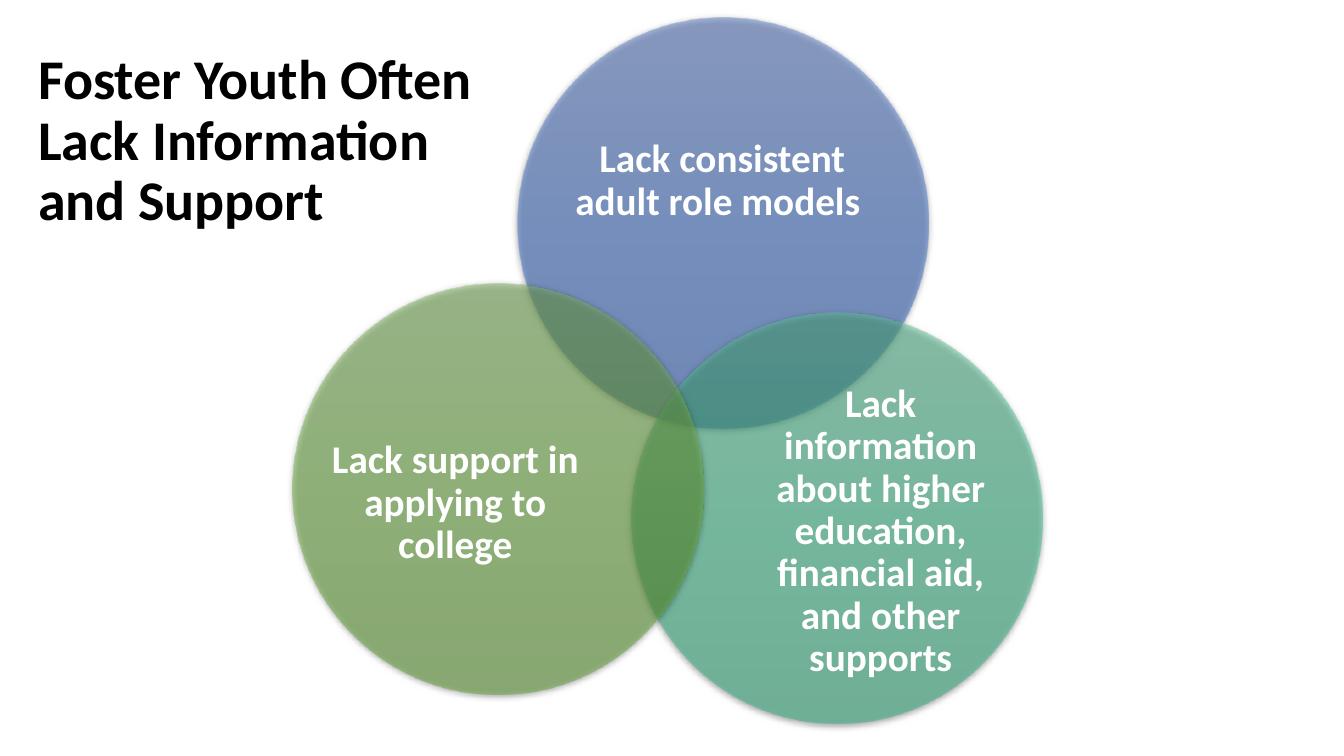
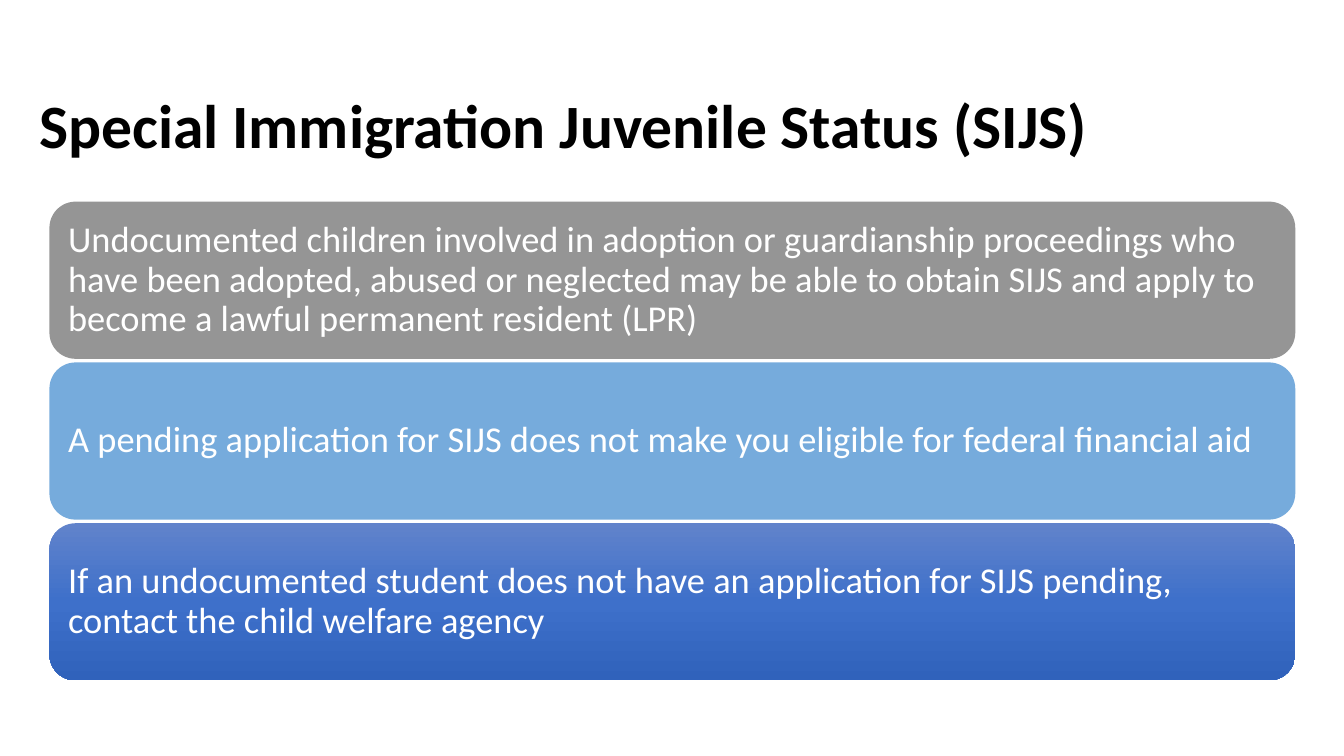
import dataclasses

import pptx
import pptx.dml.color
import pptx.enum.shapes
import pptx.enum.text
import pptx.oxml
import pptx.oxml.ns
import pptx.util
from lxml import etree

SHAPES = pptx.enum.shapes.MSO_SHAPE
ALIGN = pptx.enum.text.PP_ALIGN
WIDTH = pptx.util.Inches(13.333)
HEIGHT = pptx.util.Inches(7.5)


@dataclasses.dataclass(frozen=True)
class Theme:
    font: str = "Calibri"
    title_color: str = "000000"
    label_color: str = "FFFFFF"
    shadow_color: str = "000000"
    blue: tuple = ("6183CB", "3E70CA", "3062BB")
    teal: tuple = ("60C39A", "3DC18F", "31B080")
    green: tuple = ("81B861", "6FB242", "62A336")
    gray: tuple = ("808080",)
    sky: tuple = ("5B9BD5",)
    circle_opacity: int = 50
    bar_opacity: int = 83
    narrow_title_size: int = 40
    title_size: int = 44
    circle_size: int = 28
    bar_size: int = 26
    line_spacing: float = 0.9


THEME = Theme()


def across(percent):
    return round(WIDTH * percent / 100)


def down(percent):
    return round(HEIGHT * percent / 100)


def area(left, top, width, height):
    """Turn percentages of the slide into a position and size."""
    return across(left), down(top), across(width), down(height)


def color_xml(color, opacity):
    return f'<a:srgbClr val="{color}"><a:alpha val="{opacity * 1000}"/></a:srgbClr>'


def paint(shape, colors, opacity):
    """Fill with one flat colour, or with a gradient running from top to bottom."""
    shape.fill.solid()
    flat = shape.fill._xPr.find(pptx.oxml.ns.qn("a:solidFill"))
    if len(colors) == 1:
        content = f"<a:solidFill {{}}>{color_xml(colors[0], opacity)}</a:solidFill>"
    else:
        step = 100000 // (len(colors) - 1)
        stops = "".join(
            f'<a:gs pos="{index * step}">{color_xml(color, opacity)}</a:gs>'
            for index, color in enumerate(colors))
        content = (f'<a:gradFill {{}} rotWithShape="1"><a:gsLst>{stops}</a:gsLst>'
                   '<a:lin ang="5400000" scaled="0"/></a:gradFill>')
    fill = pptx.oxml.parse_xml(content.format(pptx.oxml.ns.nsdecls("a")))
    flat.getparent().replace(flat, fill)


def cast_shadow(shape):
    effects = shape._element.spPr.find(pptx.oxml.ns.qn("a:effectLst"))
    shadow = etree.SubElement(
        effects, pptx.oxml.ns.qn("a:outerShdw"),
        blurRad=str(pptx.util.Pt(4.5)), dist=str(pptx.util.Pt(1.5)),
        dir="5400000", algn="ctr", rotWithShape="0")
    color = etree.SubElement(shadow, pptx.oxml.ns.qn("a:srgbClr"), val=THEME.shadow_color)
    etree.SubElement(color, pptx.oxml.ns.qn("a:alpha"), val="63000")


def add_panel(page, kind, place, colors, opacity):
    panel = page.shapes.add_shape(kind, *place)
    panel.shadow.inherit = False
    panel.line.fill.background()
    paint(panel, colors, opacity)
    return panel


def write(box, text, size, color, bold=False, align=ALIGN.LEFT, inset=None):
    frame = box.text_frame
    frame.word_wrap = True
    frame.vertical_anchor = pptx.enum.text.MSO_ANCHOR.MIDDLE
    if inset is not None:
        margin = pptx.util.Inches(inset)
        frame.margin_left = frame.margin_right = margin
        frame.margin_top = frame.margin_bottom = margin
    frame.text = text
    para = frame.paragraphs[0]
    para.alignment = align
    para.line_spacing = THEME.line_spacing
    font = para.runs[0].font
    font.name = THEME.font
    font.size = pptx.util.Pt(size)
    font.bold = bold
    font.color.rgb = pptx.dml.color.RGBColor.from_string(color)


def add_title(page, text, place, size):
    write(page.shapes.add_textbox(*place), text, size, THEME.title_color, bold=True)


def add_circle(page, center, label_place, colors, text):
    diameter = down(54.4)
    left = across(center[0]) - diameter // 2
    top = down(center[1]) - diameter // 2
    circle = add_panel(page, SHAPES.OVAL, (left, top, diameter, diameter),
                       colors, THEME.circle_opacity)
    cast_shadow(circle)
    label = page.shapes.add_textbox(*area(*label_place))
    write(label, text, THEME.circle_size, THEME.label_color,
          bold=True, align=ALIGN.CENTER, inset=0)


def add_bar(page, row, colors, opacity, text):
    place = area(3.68, 26.67 + row * 21.27, 92.7, 20.8)
    bar = add_panel(page, SHAPES.ROUNDED_RECTANGLE, place, colors, opacity)
    write(bar, text, THEME.bar_size, THEME.label_color, inset=0.11)


def build_support_page(page):
    circles = [
        ((53.78, 29.47), (42.52, 11.73, 22.43, 24.53), THEME.blue,
         "Lack consistent adult role models "),
        ((62.25, 68.53), (56.33, 55.33, 18.38, 30), THEME.teal,
         "Lack information about higher education, financial aid, and other supports"),
        ((37.05, 64.67), (24.68, 51.6, 18.38, 30), THEME.green,
         "Lack support in applying to college"),
    ]
    for circle in circles:
        add_circle(page, *circle)
    add_title(page, "Foster Youth Often Lack Information and Support",
              area(2.1, 4.27, 36.98, 29.07), THEME.narrow_title_size)


def build_status_page(page):
    add_title(page, "Special Immigration Juvenile Status (SIJS)",
              area(2.18, 7.33, 96.3, 19.33), THEME.title_size)
    bars = [
        (THEME.gray, THEME.bar_opacity,
         "Undocumented children involved in adoption or guardianship proceedings who "
         "have been adopted, abused or neglected may be able to obtain SIJS and apply "
         "to become a lawful permanent resident (LPR)"),
        (THEME.sky, THEME.bar_opacity,
         "A pending application for SIJS does not make you eligible for federal "
         "financial aid"),
        (THEME.blue, 100,
         "If an undocumented student does not have an application for SIJS pending, "
         "contact the child welfare agency"),
    ]
    for row, bar in enumerate(bars):
        add_bar(page, row, *bar)


def main():
    deck = pptx.Presentation()
    deck.slide_width = WIDTH
    deck.slide_height = HEIGHT
    blank = deck.slide_layouts[6]
    for build in (build_support_page, build_status_page):
        build(deck.slides.add_slide(blank))
    deck.save("out.pptx")


if __name__ == "__main__":
    main()
